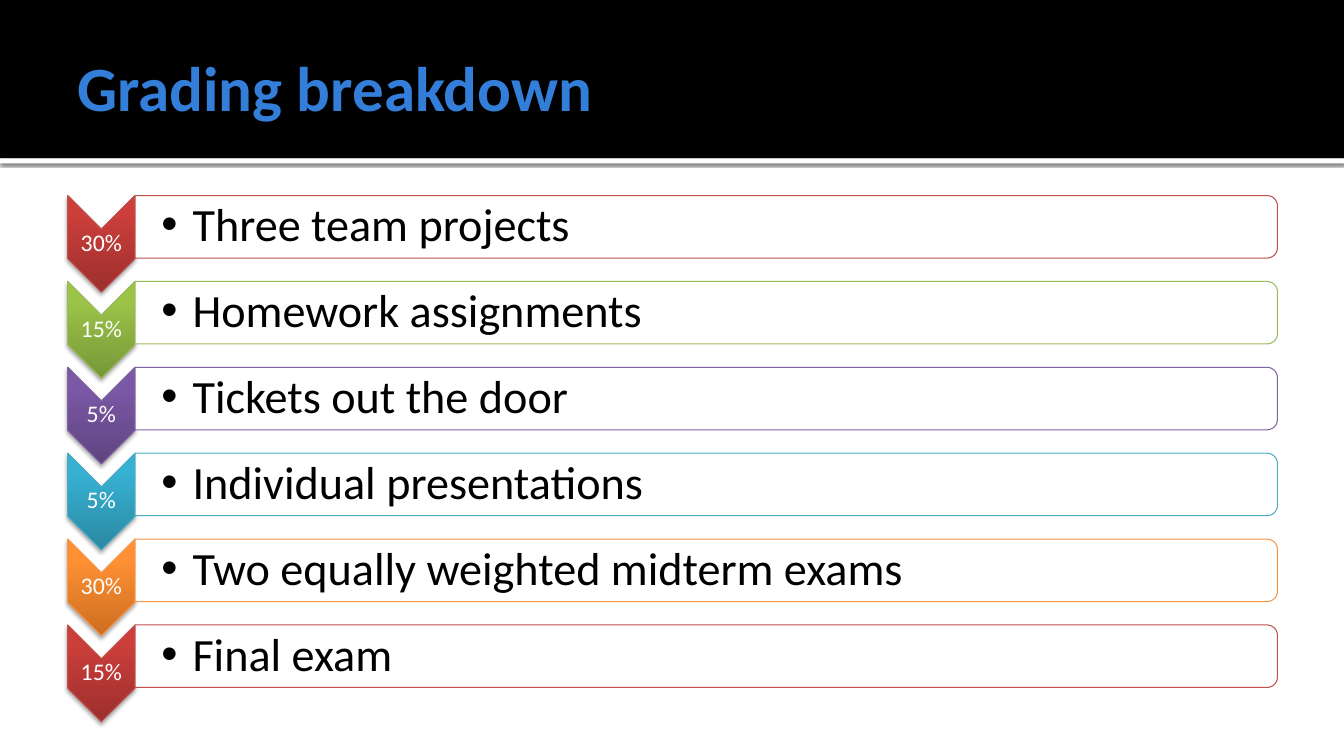
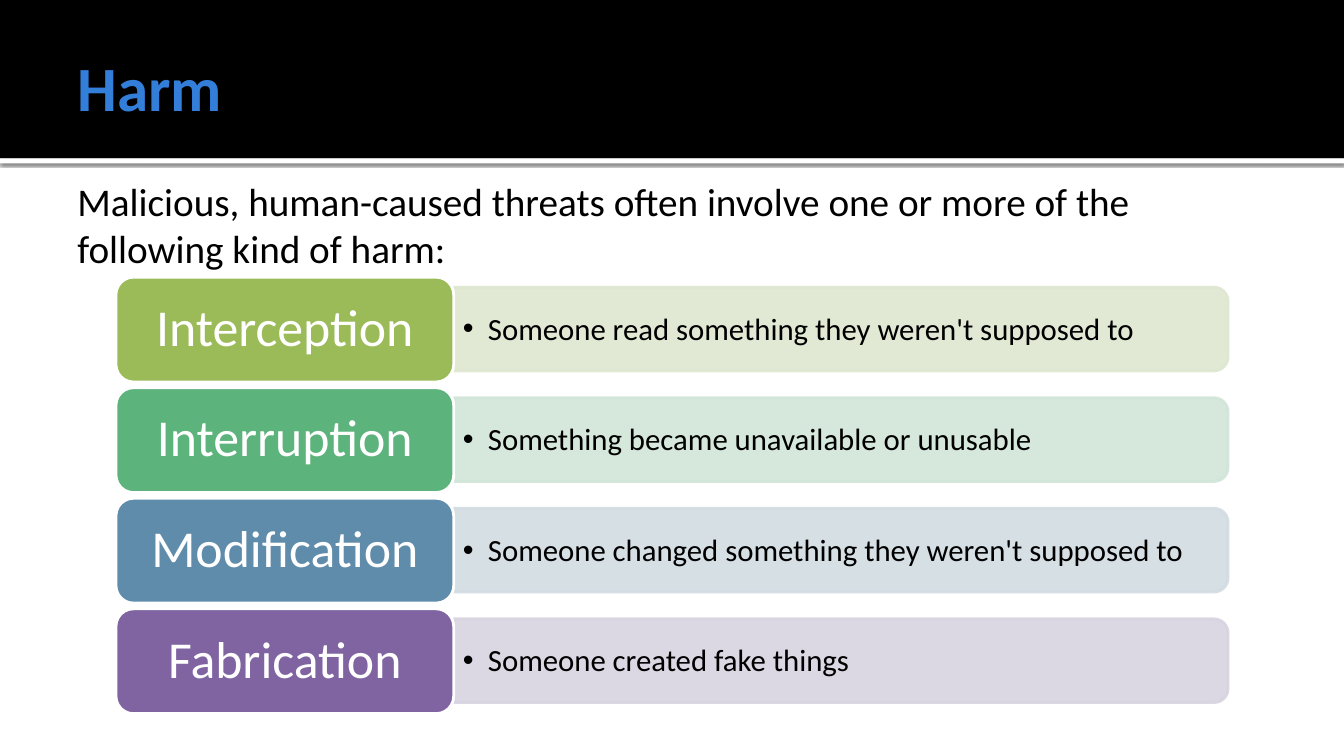
from pptx import Presentation, util as u
from pptx.dml.color import RGBColor
from pptx.enum import shapes, text
from pptx.oxml import parse_xml
from pptx.oxml.ns import nsdecls, qn
from lxml import etree

COLORS = {
    "black": "000000", "white": "FFFFFF", "title": "337ED9",
    "red": "C0504D", "green": "9BBB59", "purple": "8064A2",
    "teal": "4BACC6", "orange": "F79646",
    "mint": "5CB37C", "steel": "608CAB",
    "pale green": "DEE7D1", "pale mint": "D2E5D9",
    "pale steel": "D2DCE2", "pale purple": "D8D3E0",
}
# Gradient ends of the chevrons: dark, bright
GRADIENTS = {
    "red": ("9C2F2D", "CB3E3A"), "green": ("779737", "9BC348"),
    "purple": ("5F4480", "7B58A6"), "teal": ("2A88A2", "37B1D2"),
    "orange": ("CC6E20", "FF9034"),
}
SHAPE = shapes.MSO_SHAPE
LEFT, CENTER = text.PP_ALIGN.LEFT, text.PP_ALIGN.CENTER
TOP, MIDDLE = text.MSO_ANCHOR.TOP, text.MSO_ANCHOR.MIDDLE


def rgb(name):
    return RGBColor.from_string(COLORS.get(name, name))


class Deck:
    """Holds the shared style and the slide being built."""
    font = "Calibri"

    def __init__(self):
        self.prs = Presentation()
        self.prs.slide_width = u.Inches(13.33)
        self.prs.slide_height = u.Inches(7.5)

    def slide(self, title):
        self.s = self.prs.slides.add_slide(self.prs.slide_layouts[6])
        strip = self.shape(SHAPE.RECTANGLE, 0, 1.57, 13.33, 0.05, "white")
        self.shadow(strip, 60, 2.5, 0.8)
        self.shape(SHAPE.RECTANGLE, 0, 0, 13.33, 1.57, "black")
        self.text(title, 0.67, 0.17, 12, 1.37, 45, "title",
                  insets=(0.1, 0.05, 0.05, 0.05), bold=True)

    def shape(self, kind, x, y, w, h, fill, line=None, width=0.75, turned=False):
        """Place a shape in the box it covers, also when turned by 90 degrees."""
        if turned:
            x, y, w, h = x + (w - h) / 2, y + (h - w) / 2, h, w
        sp = self.s.shapes.add_shape(kind, *map(u.Inches, (x, y, w, h)))
        sp.rotation = 90 if turned else 0
        sp.shadow.inherit = False
        sp.fill.solid()
        sp.fill.fore_color.rgb = rgb(fill)
        if line:
            sp.line.color.rgb = rgb(line)
            sp.line.width = u.Pt(width)
        else:
            sp.line.fill.background()
        return sp

    def shadow(self, sp, alpha, blur, dist):
        effects = sp.element.spPr.find(qn("a:effectLst"))
        effects.append(parse_xml(
            f'<a:outerShdw {nsdecls("a")} blurRad="{u.Pt(blur)}" dist="{u.Pt(dist)}" '
            f'dir="5400000" rotWithShape="0"><a:srgbClr val="{COLORS["black"]}">'
            f'<a:alpha val="{alpha * 1000}"/></a:srgbClr></a:outerShdw>'))

    def chevron(self, x, y, w, h, color):
        sp = self.shape(SHAPE.CHEVRON, x, y, w, h, color, color, turned=True)
        sp.fill.gradient()
        sp.fill.gradient_angle = 90
        for stop, shade, position in zip(sp.fill.gradient_stops, GRADIENTS[color], (0, 0.8)):
            stop.color.rgb = rgb(shade)
            stop.position = position
        sp.element.spPr.find(qn("a:gradFill")).set("rotWithShape", "0")
        self.shadow(sp, 35, 3.1, 1.8)

    def bar(self, x, y, w, h, fill, line, width=0.75):
        sp = self.shape(SHAPE.ROUND_2_SAME_RECTANGLE, x, y, w, h, fill, line, width,
                        turned=True)
        for color in sp.element.spPr.iter(qn("a:srgbClr")):
            if color.get("val") == COLORS[fill]:
                etree.SubElement(color, qn("a:alpha"), val="90000")

    def text(self, words, x, y, w, h, size, color="black", **style):
        sp = self.s.shapes.add_textbox(*map(u.Inches, (x, y, w, h)))
        self.label(sp, words, size, color, **style)

    def label(self, sp, words, size, color, align=LEFT, anchor=MIDDLE,
              insets=(0.1, 0.05, 0.1, 0.05), bold=False, spacing=None, bullet=None):
        tf = sp.text_frame
        left, top, right, bottom = map(u.Inches, insets)
        frame = {"word_wrap": True, "vertical_anchor": anchor, "margin_left": left,
                 "margin_top": top, "margin_right": right, "margin_bottom": bottom}
        for name, value in frame.items():
            setattr(tf, name, value)
        p = tf.paragraphs[0]
        p.alignment = align
        if spacing:
            p.line_spacing = spacing
        if bullet:
            pPr = p._p.get_or_add_pPr()
            pPr.set("marL", str(u.Inches(bullet)))
            pPr.set("indent", str(-u.Inches(bullet)))
            etree.SubElement(pPr, qn("a:buFont"), typeface="Arial")
            etree.SubElement(pPr, qn("a:buChar"), char="•")
        r = p.add_run()
        r.text = words
        for name, value in {"name": self.font, "size": u.Pt(size), "bold": bold}.items():
            setattr(r.font, name, value)
        r.font.color.rgb = rgb(color)

    def grade_row(self, y, share, item, color):
        self.chevron(0.67, y, 0.67, 0.96, color)
        self.text(share, 0.67, y + 0.33, 0.67, 0.29, 17, "white", align=CENTER,
                  insets=(0.01,) * 4, spacing=0.9)
        self.bar(1.34, y, 11.33, 0.62, "white", color)
        self.text(item, 1.34, y + 0.03, 11.3, 0.56, 33,
                  insets=(0.26, 0.02, 0.02, 0.02), spacing=0.9, bullet=0.31)

    def harm_row(self, y, harm, meaning, color, pale):
        self.bar(4.5, y + 0.1, 7.68, 0.83, pale, pale, 2)
        self.text(meaning, 4.5, y + 0.15, 7.64, 0.75, 22,
                  insets=(0.09, 0.05, 0.09, 0.05), spacing=0.9, bullet=0.25)
        sp = self.shape(SHAPE.ROUNDED_RECTANGLE, 1.15, y, 3.35, 1.04, color, "white", 2)
        self.label(sp, harm, 37, "white", align=CENTER,
                   insets=(0.15, 0.08, 0.15, 0.08), spacing=0.9)


def main():
    deck = Deck()

    # Grading breakdown
    deck.slide("Grading breakdown")
    grades = [
        ("30%", "Three team projects", "red"),
        ("15%", "Homework assignments", "green"),
        ("5%", "Tickets out the door", "purple"),
        ("5%", "Individual presentations", "teal"),
        ("30%", "Two equally weighted midterm exams", "orange"),
        ("15%", "Final exam", "red"),
    ]
    pitch = 4.26 / (len(grades) - 1)
    for i, grade in enumerate(grades):
        deck.grade_row(1.94 + i * pitch, *grade)

    # Kinds of harm
    deck.slide("Harm")
    harms = [
        ("Interception", "Someone read something they weren't supposed to",
         "green", "pale green"),
        ("Interruption", "Something became unavailable or unusable",
         "mint", "pale mint"),
        ("Modification", "Someone changed something they weren't supposed to",
         "steel", "pale steel"),
        ("Fabrication", "Someone created fake things", "purple", "pale purple"),
    ]
    pitch = 3.29 / (len(harms) - 1)
    for i, harm in enumerate(harms):
        deck.harm_row(2.75 + i * pitch, *harm)
    deck.text("Malicious, human-caused threats often involve one or more of the "
              "following kind of harm:", 0.67, 1.71, 12, 1.04, 28, anchor=TOP)

    deck.prs.save("out.pptx")


if __name__ == "__main__":
    main()
